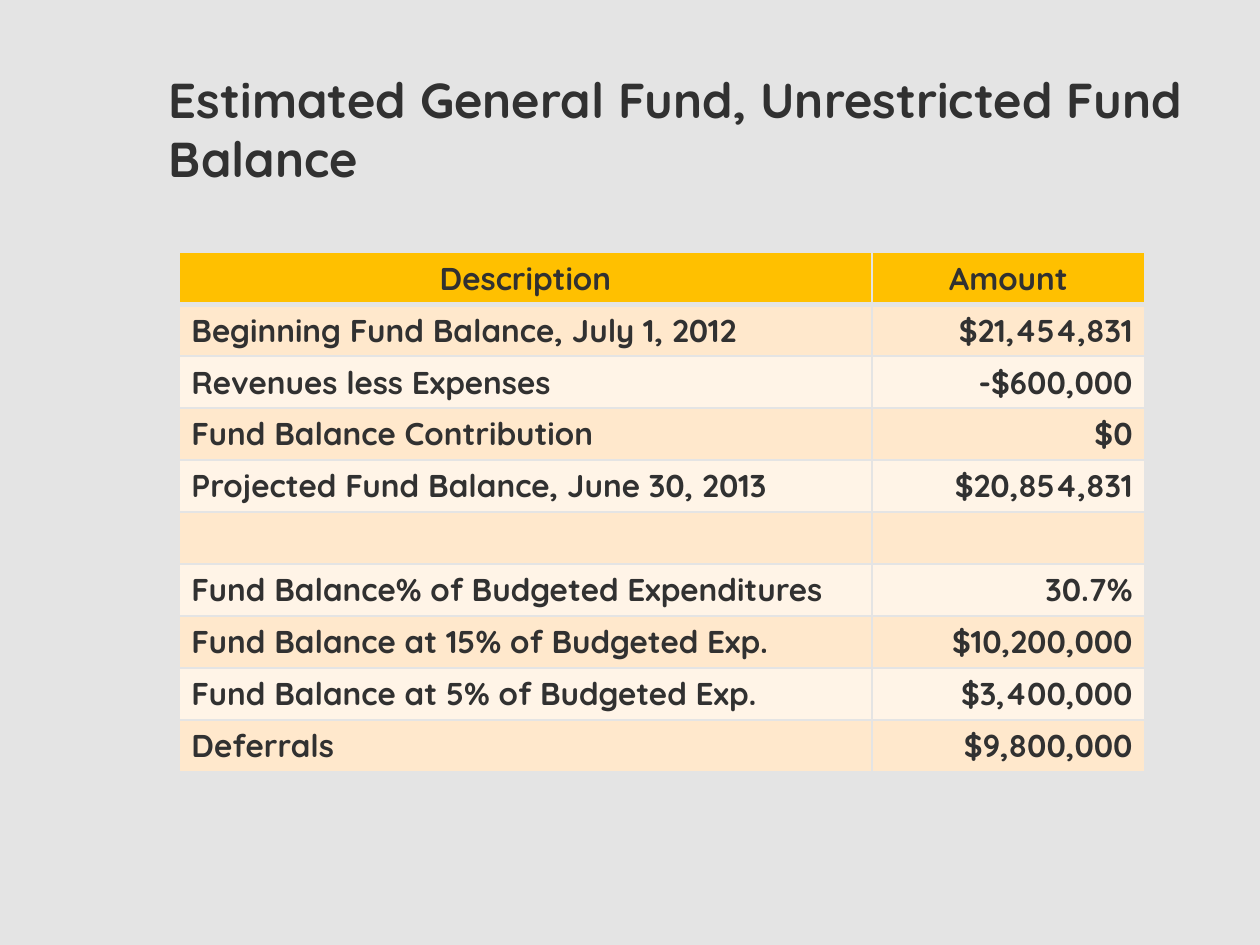
import pptx
import pptx.util
import pptx.dml.color
import pptx.enum.text
import pptx.oxml
import pptx.oxml.ns

Pt = pptx.util.Pt
RGB = pptx.dml.color.RGBColor
ALIGN = pptx.enum.text.PP_ALIGN
ANCHOR = pptx.enum.text.MSO_ANCHOR

GRAY = RGB(0xE4, 0xE4, 0xE4)
INK = RGB(0x31, 0x31, 0x31)
GOLD = RGB(0xFF, 0xC0, 0x00)
BANDS = RGB(0xFF, 0xF4, 0xE7), RGB(0xFF, 0xE8, 0xCC)
FONT = "Quicksand"

TITLE = "Estimated General Fund, Unrestricted Fund Balance"
ROWS = [
    ("Description", "Amount"),
    ("Beginning Fund Balance, July 1, 2012", "$21,454,831"),
    ("Revenues less Expenses", "-$600,000"),
    ("Fund Balance Contribution", "$0"),
    ("Projected Fund Balance, June 30, 2013", "$20,854,831"),
    ("", ""),
    ("Fund Balance% of Budgeted Expenditures", "30.7%"),
    ("Fund Balance at 15% of Budgeted Exp.", "$10,200,000"),
    ("Fund Balance at 5% of Budgeted Exp.", "$3,400,000"),
    ("Deferrals", "$9,800,000"),
]
WIDTHS = 396, 156.2
HIGH = 29.7


def write(frame, text, size=18, align=ALIGN.LEFT):
    para = frame.paragraphs[0]
    para.alignment = align
    if text:
        run = para.add_run()
        run.text = text
        font = run.font
        font.name, font.size, font.bold = FONT, Pt(size), True
        font.color.rgb = INK


def edge(cell, base):
    """Draw the cell's borders; base is the width of the bottom one."""
    props = cell._tc.get_or_add_tcPr()
    sides = ("L", 1), ("R", 1), ("T", 1), ("B", base)
    for place, (side, width) in enumerate(sides):
        props.insert(place, pptx.oxml.parse_xml(
            f'<a:ln{side} {pptx.oxml.ns.nsdecls("a")} w="{Pt(width)}">'
            f'<a:solidFill><a:srgbClr val="{GRAY}"/></a:solidFill>'
            f'</a:ln{side}>'))


def main():
    deck = pptx.Presentation()
    deck.slide_width, deck.slide_height = Pt(720), Pt(540)
    slide = deck.slides.add_slide(deck.slide_layouts[6])
    slide.background.fill.solid()
    slide.background.fill.fore_color.rgb = GRAY

    title = slide.shapes.add_textbox(Pt(89.5), Pt(32.5), Pt(600.5), Pt(81.5))
    frame = title.text_frame
    frame.word_wrap = True
    frame.vertical_anchor = ANCHOR.MIDDLE
    write(frame, TITLE, size=28)

    table = slide.shapes.add_table(
        len(ROWS), len(WIDTHS), Pt(102.2), Pt(144.2),
        Pt(sum(WIDTHS)), Pt(HIGH * len(ROWS))).table
    for col, width in zip(table.columns, WIDTHS):
        col.width = Pt(width)
    for i, row in enumerate(ROWS):
        table.rows[i].height = Pt(HIGH)
        for j, text in enumerate(row):
            cell = table.cell(i, j)
            cell.fill.solid()
            cell.fill.fore_color.rgb = BANDS[i % 2] if i else GOLD
            body = ALIGN.RIGHT if j else ALIGN.LEFT
            write(cell.text_frame, text, align=body if i else ALIGN.CENTER)
            edge(cell, 1 if i else 3)

    deck.save("out.pptx")


if __name__ == "__main__":
    main()
